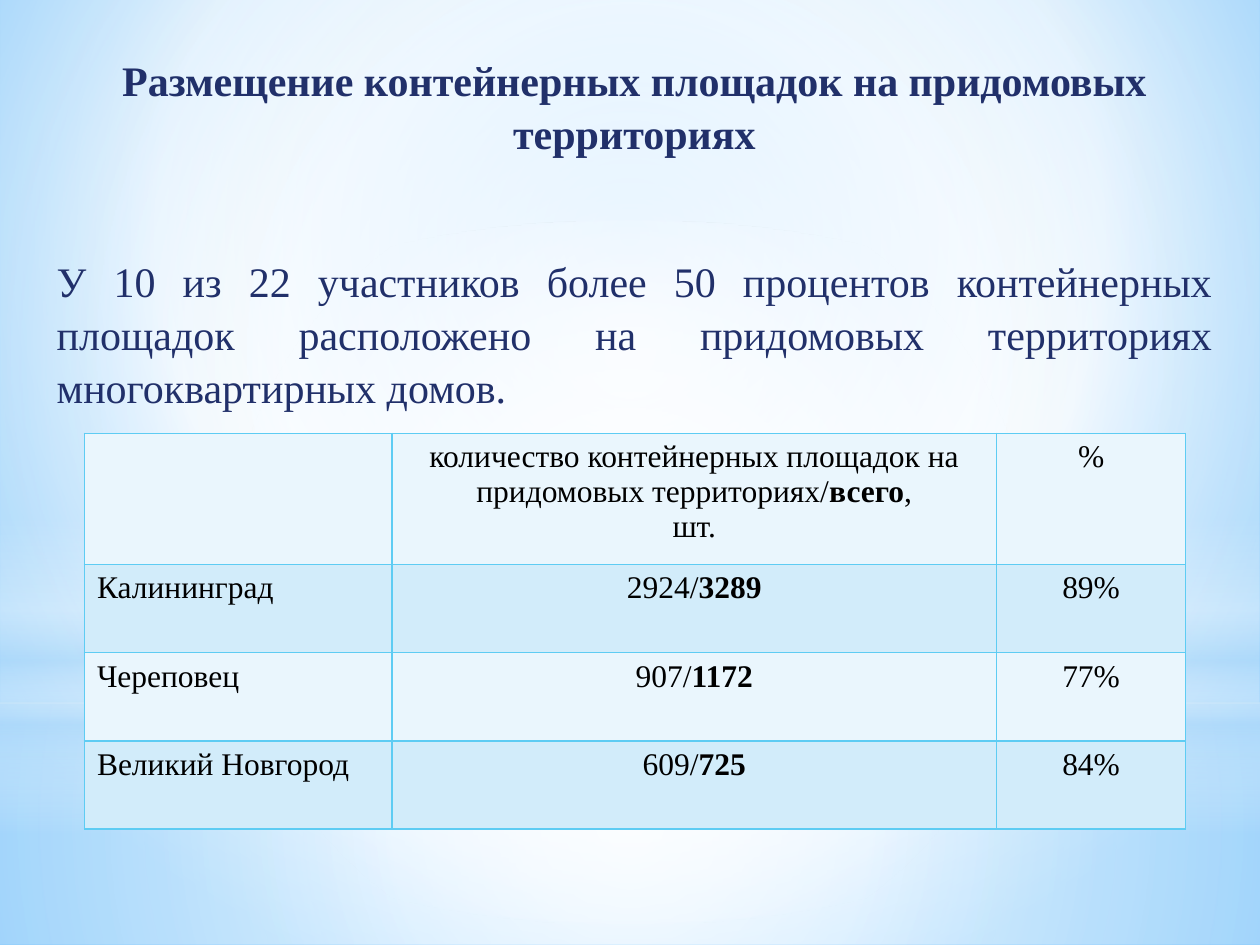
from lxml import etree
from pptx import Presentation
from pptx.dml.color import RGBColor
from pptx.enum.shapes import MSO_SHAPE
from pptx.enum.text import MSO_ANCHOR, MSO_AUTO_SIZE, PP_ALIGN
from pptx.oxml.ns import qn
from pptx.util import Inches, Pt

RECTANGLE, OVAL = MSO_SHAPE.RECTANGLE, MSO_SHAPE.OVAL
CENTER, JUSTIFY, LEFT = PP_ALIGN.CENTER, PP_ALIGN.JUSTIFY, PP_ALIGN.LEFT
TOP, NO_AUTOFIT = MSO_ANCHOR.TOP, MSO_AUTO_SIZE.NONE
FONT = "Times New Roman"
NAVY = RGBColor(0x21, 0x30, 0x6A)
BLACK = RGBColor(0, 0, 0)
BORDER = RGBColor(0x5E, 0xCC, 0xF3)
WHITE = RGBColor(0xFF, 0xFF, 0xFF)
MIST = RGBColor(0xB4, 0xDC, 0xFA)
SKY = RGBColor(0x9E, 0xD5, 0xFF)
AZURE = RGBColor(0x5B, 0xB9, 0xFF)
BANDS = [RGBColor(0xEA, 0xF6, 0xFD), RGBColor(0xD2, 0xEC, 0xFA)]


def set_gradient(element, stops, center):
    gradient = element.find(".//" + qn("a:gradFill"))
    for child in list(gradient):
        gradient.remove(child)
    stop_list = etree.SubElement(gradient, qn("a:gsLst"))
    for position, color, opacity in stops:
        stop = etree.SubElement(stop_list, qn("a:gs"), pos=str(position * 1000))
        tint = etree.SubElement(stop, qn("a:srgbClr"), val=str(color))
        etree.SubElement(tint, qn("a:alpha"), val=str(opacity * 1000))
    if center:
        route = etree.SubElement(gradient, qn("a:path"), path="circle")
        edges = {side: str(value * 1000) for side, value in zip("ltrb", center)}
        etree.SubElement(route, qn("a:fillToRect"), **edges)
    else:
        etree.SubElement(gradient, qn("a:lin"), ang="5400000", scaled="0")


def format_runs(para, size, color, bold=False):
    for span in para.runs:
        span.font.name = FONT
        span.font.size = Pt(size)
        span.font.color.rgb = color
        span.font.bold = bold


deck = Presentation()
deck.slide_width, deck.slide_height = Inches(10), Inches(7.5)
page = deck.slides.add_slide(deck.slide_layouts[1])

page.background.fill.gradient()
set_gradient(page.element, [(0, SKY, 100), (60, WHITE, 100), (100, AZURE, 100)],
             (20, 10, 20, 60))

MIDDLE = (50, 50, 50, 50)
glows = [
    (RECTANGLE, 5.58, 1.92, [(0, WHITE, 91), (37, WHITE, 76), (100, MIST, 79)], MIDDLE),
    (RECTANGLE, 0, 5.58, [(0, WHITE, 89), (48, WHITE, 62), (100, MIST, 79)], MIDDLE),
    (RECTANGLE, 4.12, 2.5, [(0, WHITE, 0), (29, WHITE, 30), (45, MIST, 40),
                            (55, WHITE, 26), (65, MIST, 60), (100, WHITE, 0)], None),
    (OVAL, 1.75, 5.58, [(0, WHITE, 100), (56, WHITE, 0)], MIDDLE),
]
for kind, top, height, stops, center in glows:
    glow = page.shapes.add_shape(kind, 0, Inches(top), deck.slide_width, Inches(height))
    glow.shadow.inherit = False
    glow.line.fill.background()
    glow.fill.gradient()
    set_gradient(glow.element, stops, center)

title, body = page.shapes.title, page.placeholders[1]
texts = [
    (title, 0.36, 0.95, CENTER, True,
     "Размещение контейнерных площадок на придомовых территориях"),
    (body, 1.96, 1.33, JUSTIFY, False,
     "У 10 из 22 участников более 50 процентов контейнерных площадок "
     "расположено на придомовых территориях многоквартирных домов."),
]
for box, top, height, align, bold, text in texts:
    page.shapes.element.append(box.element)
    box.left, box.top = Inches(0.35), Inches(top)
    box.width, box.height = Inches(9.37), Inches(height)
    frame = box.text_frame
    frame.text = text
    frame.word_wrap = True
    frame.auto_size = NO_AUTOFIT
    frame.vertical_anchor = TOP
    para = frame.paragraphs[0]
    para.alignment = align
    para.line_spacing = 1.05
    para.space_before = Pt(0)
    format_runs(para, 24, NAVY, bold)
properties = body.text_frame.paragraphs[0]._p.get_or_add_pPr()
properties.set("marL", "0")
properties.set("indent", "0")
etree.SubElement(properties, qn("a:buNone"))

rows = [
    ("", ("количество контейнерных площадок на придомовых территориях/", "всего", ",\nшт."), "%"),
    ("Калининград", ("2924/", "3289"), "89%"),
    ("Череповец", ("907/", "1172"), "77%"),
    ("Великий Новгород", ("609/", "725"), "84%"),
]
widths = [2.44, 4.8, 1.5]
heights = [1.04, 0.7, 0.7, 0.7]
table = page.shapes.add_table(len(rows), len(widths), Inches(0.67), Inches(3.44),
                              Inches(sum(widths)), Inches(sum(heights))).table
for column, width in zip(table.columns, widths):
    column.width = Inches(width)
for row, height in zip(table.rows, heights):
    row.height = Inches(height)

for r, (city, counts, share) in enumerate(rows):
    for c, text in enumerate([city, "".join(counts), share]):
        cell = table.cell(r, c)
        cell.text = text
        if c == 1:
            first = cell.text_frame.paragraphs[0]
            first.text = counts[0]
            for part in counts[1:]:
                first.add_run().text = part.split("\n")[0]
        for para in cell.text_frame.paragraphs:
            para.alignment = LEFT if c == 0 else CENTER
            format_runs(para, 18, BLACK)
        if c == 1:
            first.runs[1].font.bold = True
        cell_properties = cell._tc.get_or_add_tcPr()
        for side in ("lnL", "lnR", "lnT", "lnB"):
            line = etree.SubElement(cell_properties, qn("a:" + side), w=str(Pt(1)))
            solid = etree.SubElement(line, qn("a:solidFill"))
            etree.SubElement(solid, qn("a:srgbClr"), val=str(BORDER))
        cell.fill.solid()
        cell.fill.fore_color.rgb = BANDS[r % 2]

deck.save("out.pptx")
